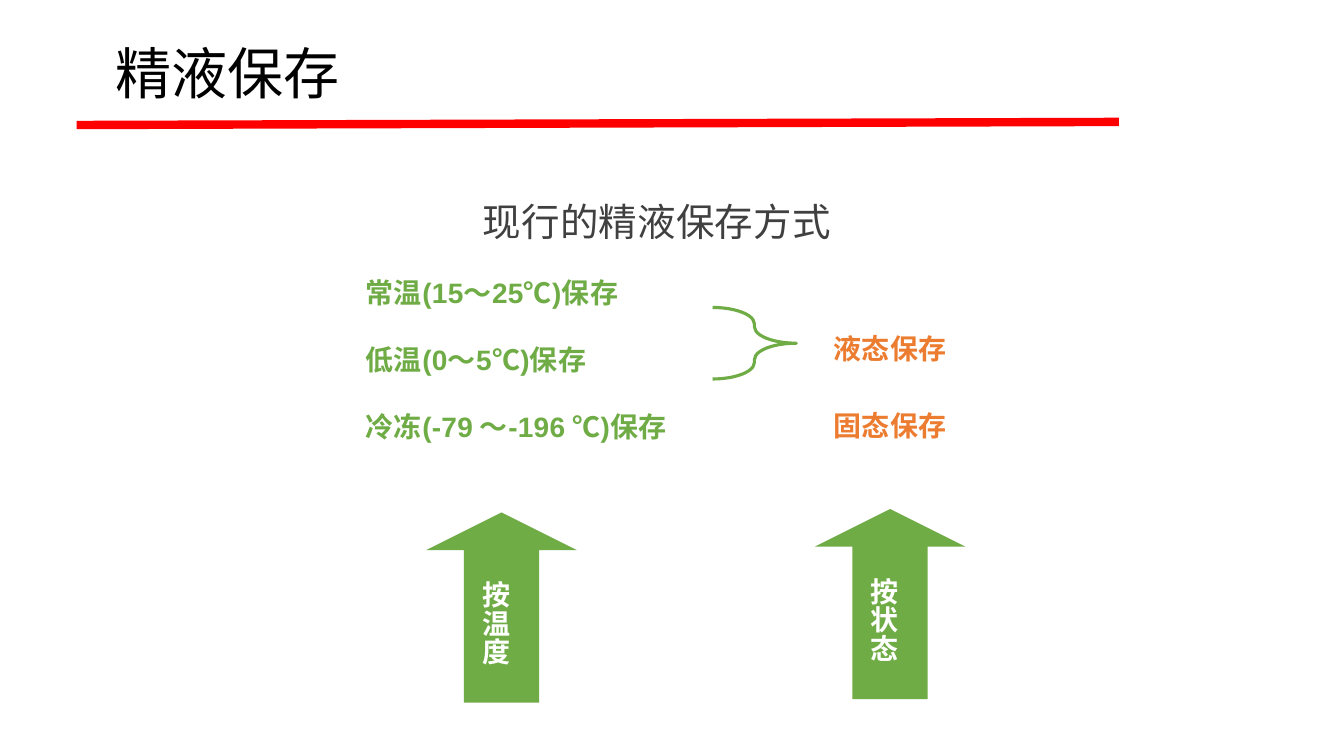
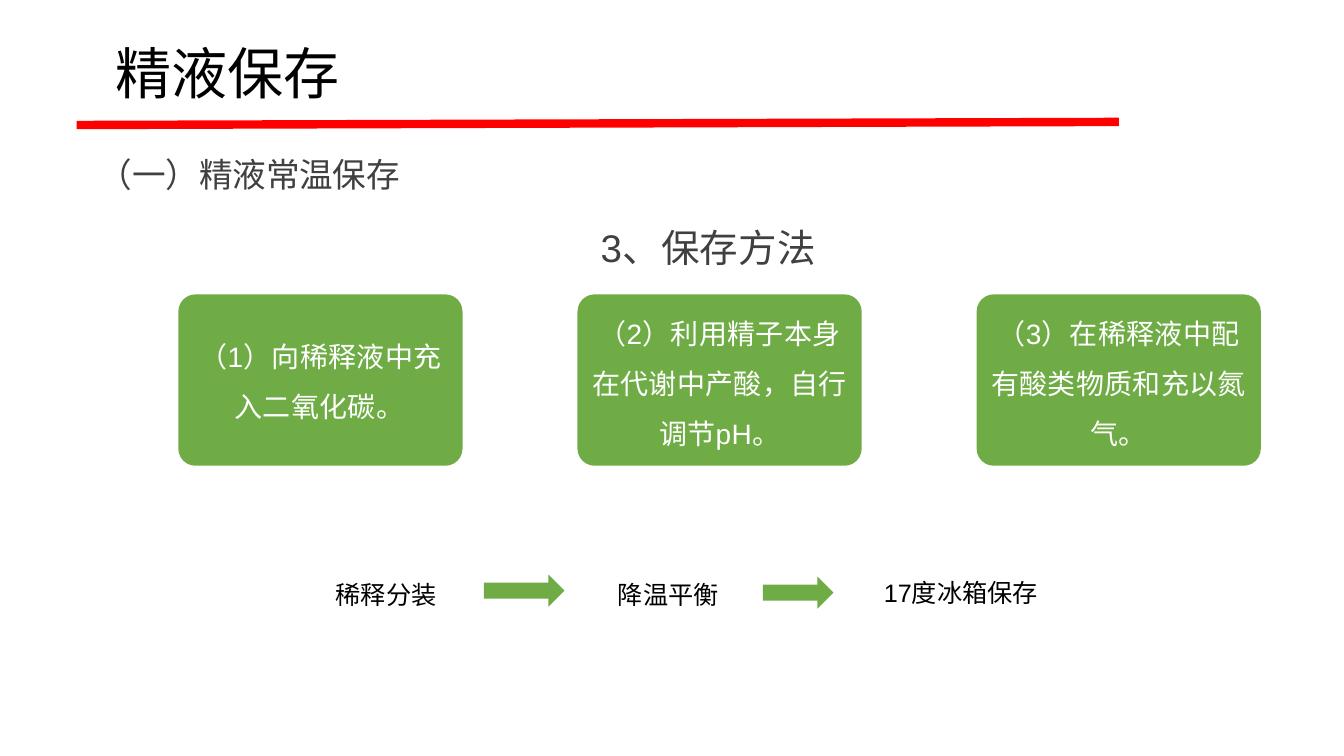
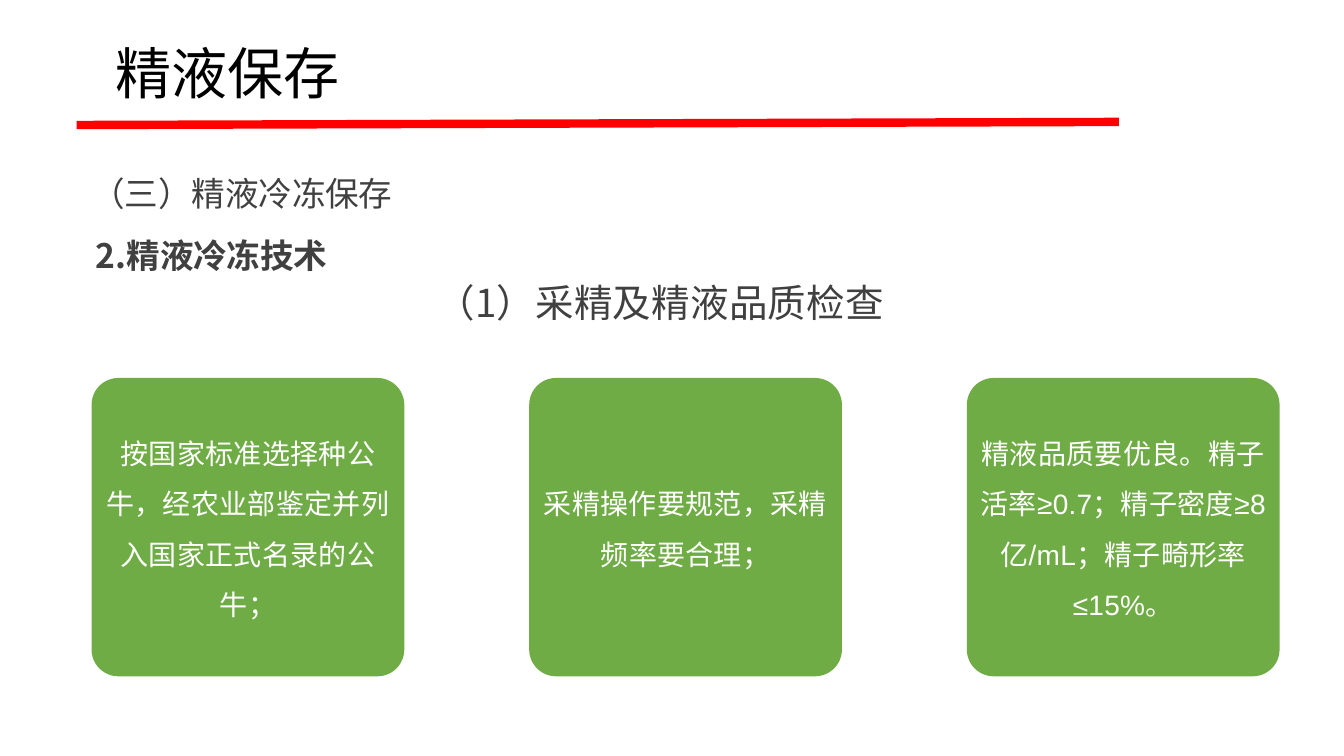
"""Build three slides on semen preservation."""
from itertools import groupby

from lxml import etree
from pptx import Presentation
from pptx.dml.color import RGBColor
from pptx.enum.shapes import MSO_CONNECTOR, MSO_SHAPE
from pptx.enum.text import MSO_ANCHOR, PP_ALIGN
from pptx.oxml.ns import qn
from pptx.util import Pt

LEFT, CENTER = PP_ALIGN.LEFT, PP_ALIGN.CENTER
TOP, MIDDLE = MSO_ANCHOR.TOP, MSO_ANCHOR.MIDDLE
STRAIGHT = MSO_CONNECTOR.STRAIGHT
ROUNDED, BRACE = MSO_SHAPE.ROUNDED_RECTANGLE, MSO_SHAPE.RIGHT_BRACE
UP_ARROW, RIGHT_ARROW = MSO_SHAPE.UP_ARROW, MSO_SHAPE.RIGHT_ARROW

CJK, LATIN = "Noto Sans CJK SC", "Arial"
GREEN, ORANGE, RED = "6FAC46", "EC7C30", "FF0000"
BLACK, GREY, WHITE = "000000", "404040", "FFFFFF"

TITLE = "精液保存"

TEMPERATURES = ["常温(15～25℃)保存", "低温(0～5℃)保存", "冷冻(-79 ～-196 ℃)保存"]
STATES = [("液态保存", 235.4), ("固态保存", 290.2)]
CRITERIA = [("按温度", 304.4, 366), ("按状态", 582, 363.6)]

METHODS = [
    (["（1）向稀释液中充 入二氧化碳。"],
     dict(side=10, top=16.6, align=LEFT, indent=26.6, first=-25.2)),
    (["（2）利用精子本身 在代谢中产酸，自行 调节pH。"], dict(side=6, top=0)),
    (["（3）在稀释液中配 有酸类物质和充以氮 气。"], dict(side=6, top=0)),
]
STEPS = [("稀释分装", 239.8, 412.6, 74.2), ("降温平衡", 441.4, 412.6, 74.2),
         ("17度冰箱保存", 631.4, 411.2, 111.6)]
STEP_ARROWS = [(345.6, 410.4, 57.6), (545, 411.8, 50.4)]

CHECKS = [
    (["按国家标准选择种公 牛，经农业部鉴定并列 入国家正式名录的公 牛；"],
     dict(side=3.4, top=24)),
    (["采精操作要规范，采精 频率要合理；"], dict(side=3.4, top=60)),
    (["精液品质要优良。精子 活率≥0.7；精子密度≥8 亿/mL；精子畸形率", "≤15%。"],
     dict(side=3.4, top=24)),
]


def color(value):
    return RGBColor.from_string(value)


def is_latin(char):
    return char in "≤≥" or (char.isascii() and char != " ")


def write(frame, text, size=20, ink=GREY, bold=False, align=LEFT, indent=0,
          first=0, line=None, before=0, spacing=0.2, latin=LATIN):
    """Append one paragraph, setting Latin and Chinese parts in their own fonts."""
    paragraph = frame.add_paragraph() if frame.text else frame.paragraphs[0]
    paragraph.alignment = align
    paragraph.space_before = Pt(before)
    if line:
        paragraph.line_spacing = line
    properties = paragraph._p.get_or_add_pPr()
    properties.set("marL", str(Pt(indent)))
    properties.set("indent", str(Pt(first)))
    for latin_part, chars in groupby(text, is_latin):
        run = paragraph.add_run()
        run.text = "".join(chars)
        run.font.size, run.font.bold = Pt(size), bold
        run.font.color.rgb = color(ink)
        run.font.name = latin if latin_part else CJK
        run_properties = run._r.get_or_add_rPr()
        run_properties.set("spc", str(round(spacing * 100)))
        etree.SubElement(run_properties, qn("a:ea")).set("typeface", run.font.name)


def set_frame(frame, margins, anchor=TOP):
    frame.word_wrap = True
    frame.vertical_anchor = anchor
    (frame.margin_left, frame.margin_top,
     frame.margin_right, frame.margin_bottom) = map(Pt, margins)
    return frame


def add_text(slide, x, y, width, height, text, anchor=TOP, **fmt):
    box = slide.shapes.add_textbox(Pt(x), Pt(y), Pt(width), Pt(height))
    frame = set_frame(box.text_frame, (0, 1.4, 0, 0), anchor)
    write(frame, text, **fmt)
    return frame


def add_solid(slide, kind, x, y, width, height, *adjustments):
    solid = slide.shapes.add_shape(kind, Pt(x), Pt(y), Pt(width), Pt(height))
    solid.shadow.inherit = False
    solid.fill.solid()
    solid.fill.fore_color.rgb = color(GREEN)
    solid.line.fill.background()
    for index, value in enumerate(adjustments):
        solid.adjustments[index] = value
    return solid


def add_cards(slide, cards, x, y, pitch, width, height, corner):
    for index, (paragraphs, layout) in enumerate(cards):
        fmt = dict(align=CENTER, line=1.5) | layout
        side, top = fmt.pop("side"), fmt.pop("top")
        card = add_solid(slide, ROUNDED, x + index * pitch, y, width, height, corner)
        frame = set_frame(card.text_frame, (side, top, side, 0))
        write(frame, paragraphs[0], ink=WHITE, **fmt)
        for text in paragraphs[1:]:
            write(frame, text, ink=WHITE, align=CENTER, before=12.1)


def add_heading(slide, x, y, width, text, **fmt):
    add_text(slide, x, y, width, 34.6, text, size=27.5, **fmt)


def add_section(slide, text, indent, **fmt):
    return add_text(slide, 52.6, 107.6, 750, 44.6, text, size=24, indent=indent,
                    spacing=-0.1, **fmt)


def new_slide(deck):
    slide = deck.slides.add_slide(deck.slide_layouts[6])
    rule = slide.shapes.add_connector(STRAIGHT, Pt(54.7), Pt(89.3), Pt(799.2), Pt(87.1))
    rule.line.color.rgb, rule.line.width = color(RED), Pt(6)
    etree.SubElement(rule._element.spPr, qn("a:effectLst"))
    add_text(slide, 82.4, 1.4, 800, 104.4, TITLE, anchor=MIDDLE, size=40,
             ink=BLACK, line=0.9, spacing=0)
    return slide


def build_overview(deck):
    slide = new_slide(deck)
    add_heading(slide, 344.9, 140.4, 271.4, "现行的精液保存方式")
    for text, y in STATES:
        add_text(slide, 595.4, y, 82.8, 26.6, text, ink=ORANGE, bold=True)
    brace = add_solid(slide, BRACE, 509, 219.6, 59.8, 51.1, 0.23, 0.5)
    brace.fill.background()
    brace.line.color.rgb, brace.line.width = color(GREEN), Pt(2.25)
    for text, x, y in CRITERIA:
        arrow = add_solid(slide, UP_ARROW, x, y, 107.6, 135.8, 0.5, 0.25)
        frame = set_frame(arrow.text_frame, (13, 37, 18.5, 0))
        write(frame, text, ink=WHITE, bold=True, line=Pt(20.3), spacing=0.1)
    first, *others = TEMPERATURES
    frame = add_text(slide, 261.2, 195.1, 216, 122.4, first, ink=GREEN, bold=True)
    for text in others:
        write(frame, text, ink=GREEN, bold=True, before=24.1)


def build_methods(deck):
    slide = new_slide(deck)
    add_section(slide, "（一）精液常温保存", 18).margin_top = Pt(2)
    add_heading(slide, 429.1, 158.4, 216, "3、保存方法")
    add_cards(slide, METHODS, 127.4, 210.3, 285.1, 203, 122.4, 0.1)
    for text, x, y, width in STEPS:
        add_text(slide, x, y, width, 23.8, text, size=18, ink=BLACK, spacing=0)
    for x, y, width in STEP_ARROWS:
        add_solid(slide, RIGHT_ARROW, x, y, width, 23, 0.5, 0.5)


def build_freezing(deck):
    slide = new_slide(deck)
    frame = add_section(slide, "（三）精液冷冻保存", 12.6, line=1.5)
    write(frame, "2.精液冷冻技术", size=24, bold=True, indent=16, line=1.5,
          before=0.9, spacing=-0.1, latin=CJK)
    add_cards(slide, CHECKS, 65.4, 270, 312.6, 223.4, 213.1, 0.09)
    add_heading(slide, 311.8, 198, 337, "（1）采精及精液品质检查", latin=CJK)


def main():
    deck = Presentation()
    deck.slide_width, deck.slide_height = Pt(960), Pt(540)
    for build in (build_overview, build_methods, build_freezing):
        build(deck)
    deck.save("out.pptx")


if __name__ == "__main__":
    main()
